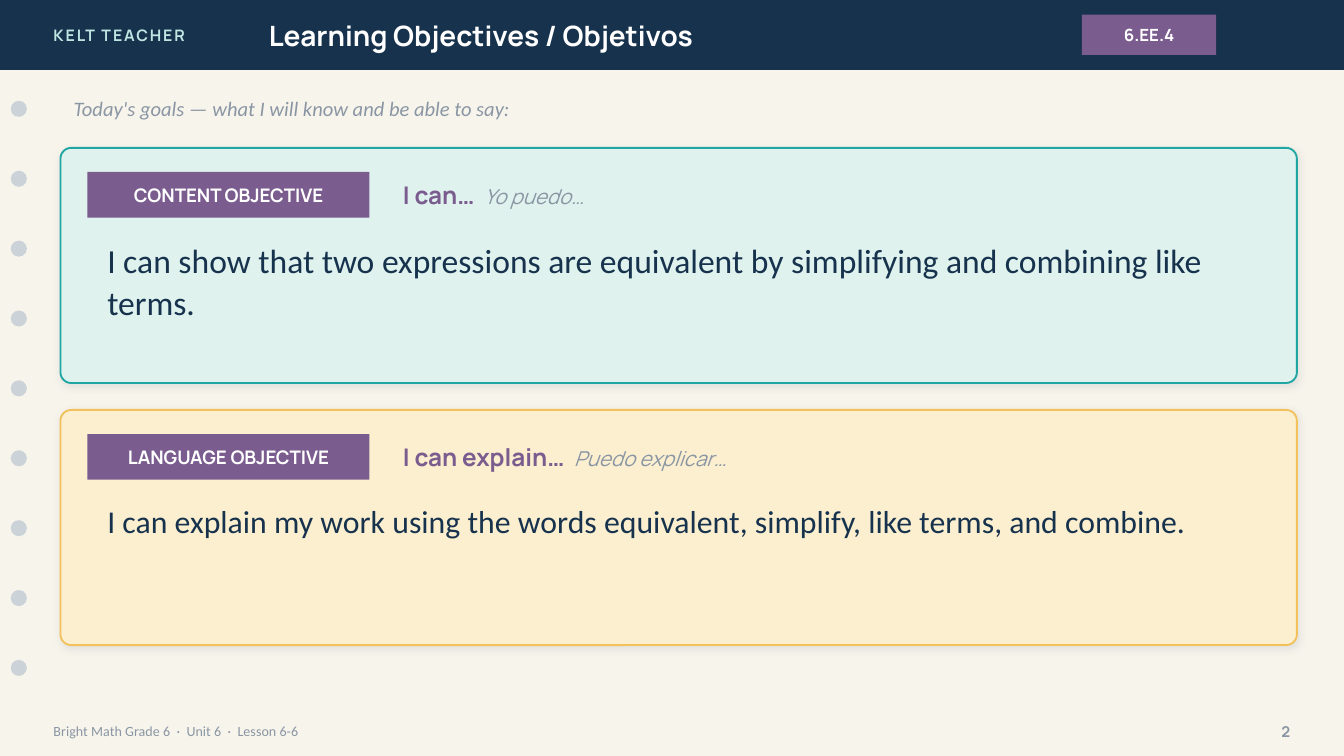
import dataclasses

import lxml.etree
import pptx
import pptx.dml.color
import pptx.enum.shapes
import pptx.enum.text
import pptx.oxml.ns
import pptx.util

Inches = pptx.util.Inches
Shape = pptx.enum.shapes.MSO_SHAPE
Align = pptx.enum.text.PP_ALIGN
Anchor = pptx.enum.text.MSO_ANCHOR
qn = pptx.oxml.ns.qn


@dataclasses.dataclass(frozen=True)
class Theme:
    paper: str = "F7F4EC"
    navy: str = "17324D"
    white: str = "FFFFFF"
    mint: str = "BFE6E2"
    purple: str = "7A5C8E"
    grey: str = "8A96A3"
    hole: str = "CBD3D9"
    shadow: str = "1C2E42"
    heading: str = "Manrope"
    body: str = "Calibri"
    title_size: float = 15
    stem_size: float = 13
    small_size: float = 11
    label_size: float = 10
    badge_size: float = 9
    brand_size: float = 8.5
    number_size: float = 8
    footer_size: float = 7.5


theme = Theme()
color = pptx.dml.color.RGBColor.from_string


def add_block(kind, place, fill, line=None):
    """Add a filled preset shape without shadow."""
    block = page.shapes.add_shape(kind, *map(Inches, place))
    block.shadow.inherit = False
    block.fill.solid()
    block.fill.fore_color.rgb = color(fill)
    if line:
        block.line.color.rgb = color(line)
        block.line.width = pptx.util.Pt(1)
    else:
        block.line.fill.background()
    return block


def write(box, spans, align=Align.LEFT, anchor=Anchor.MIDDLE):
    """Fill a box with one paragraph of (text, size, font, colour, bold, italic) spans."""
    frame = box.text_frame
    frame.word_wrap = True
    frame.auto_size = pptx.enum.text.MSO_AUTO_SIZE.NONE
    frame.vertical_anchor = anchor
    para = frame.paragraphs[0]
    para.alignment = align
    for text, size, font, ink, bold, italic in spans:
        span = para.add_run()
        span.text = text
        span.font.size = pptx.util.Pt(size)
        span.font.name = font
        span.font.color.rgb = color(ink)
        span.font.bold = bold
        span.font.italic = italic
    return para


deck = pptx.Presentation()
deck.slide_width = Inches(10)
deck.slide_height = Inches(5.625)
page = deck.slides.add_slide(deck.slide_layouts[5])
page.background.fill.solid()
page.background.fill.fore_color.rgb = color(theme.paper)

# Header bar with title
bar = add_block(Shape.RECTANGLE, (0, 0, 10, 0.52), theme.navy)
title = page.shapes.title
title.left, title.top, title.width, title.height = map(Inches, (1.9, 0, 5.6, 0.52))
bar.element.addnext(title.element)
write(title, [("Learning Objectives / Objetivos", theme.title_size,
               theme.heading, theme.white, True, False)])

# Standard badge
badge = add_block(Shape.RECTANGLE, (8.05, 0.11, 1, 0.3), theme.purple)
write(badge, [("6.EE.4", theme.badge_size, theme.heading, theme.white, True, False)],
      Align.CENTER)

# Punched holes down the left edge
for index in range(9):
    add_block(Shape.OVAL, (0.08, 0.75 + 0.52 * index, 0.12, 0.12), theme.hole)

# Brand, footer, page number and lead-in
labels = [
    ((0.3, 0, 2.4, 0.52), "KELT TEACHER", theme.brand_size, theme.heading,
     theme.mint, True, False, Align.LEFT),
    ((0.3, 5.3, 7, 0.28), "Bright Math Grade 6  ·  Unit 6  ·  Lesson 6-6",
     theme.footer_size, theme.body, theme.grey, False, False, Align.LEFT),
    ((9.2, 5.3, 0.5, 0.28), "2", theme.number_size, theme.heading,
     theme.grey, True, False, Align.RIGHT),
    ((0.45, 0.66, 9.2, 0.3), "Today's goals — what I will know and be able to say:",
     theme.small_size, theme.body, theme.grey, False, True, Align.LEFT),
]
for place, *style, align in labels:
    box = page.shapes.add_textbox(*map(Inches, place))
    para = write(box, [style], align)
    if style[1] == theme.brand_size:
        para.runs[0].font._element.set("spc", "100")

# Objective cards
cards = [
    ("CONTENT OBJECTIVE", "I can…  ", "Yo puedo…",
     "I can show that two expressions are equivalent by simplifying and combining like terms.",
     18, "DFF2EE", "1FA6A2"),
    ("LANGUAGE OBJECTIVE", "I can explain…  ", "Puedo explicar…",
     "I can explain my work using the words equivalent, simplify, like terms, and combine.",
     17, "FBEFD0", "F2C15B"),
]
for index, (label, stem, spanish, goal, goal_size, fill, line) in enumerate(cards):
    top = 1.1 + 1.95 * index
    card = add_block(Shape.ROUNDED_RECTANGLE, (0.45, top, 9.2, 1.75), fill, line)
    card.adjustments[0] = 0.046

    # Soft shadow below the card
    effects = card.element.spPr.find(qn("a:effectLst"))
    shadow = lxml.etree.SubElement(
        effects, qn("a:outerShdw"), blurRad=str(pptx.util.Pt(4)),
        dist=str(pptx.util.Pt(1)), dir="5400000", algn="bl", rotWithShape="0")
    tint = lxml.etree.SubElement(shadow, qn("a:srgbClr"), val=theme.shadow)
    lxml.etree.SubElement(tint, qn("a:alpha"), val="10000")

    tag = add_block(Shape.RECTANGLE, (0.65, top + 0.18, 2.1, 0.34), theme.purple)
    write(tag, [(label, theme.label_size, theme.heading, theme.white, True, False)],
          Align.CENTER)

    starter = page.shapes.add_textbox(*map(Inches, (2.9, top + 0.18, 6.6, 0.34)))
    write(starter, [
        (stem, theme.stem_size, theme.heading, theme.purple, True, False),
        (spanish, theme.small_size, theme.heading, theme.grey, False, True),
    ])

    statement = page.shapes.add_textbox(*map(Inches, (0.7, top + 0.62, 8.7, 1)))
    para = write(statement, [(goal, goal_size, theme.body, theme.navy, False, False)],
                 anchor=Anchor.TOP)
    para.line_spacing = 1.05

deck.save("out.pptx")
